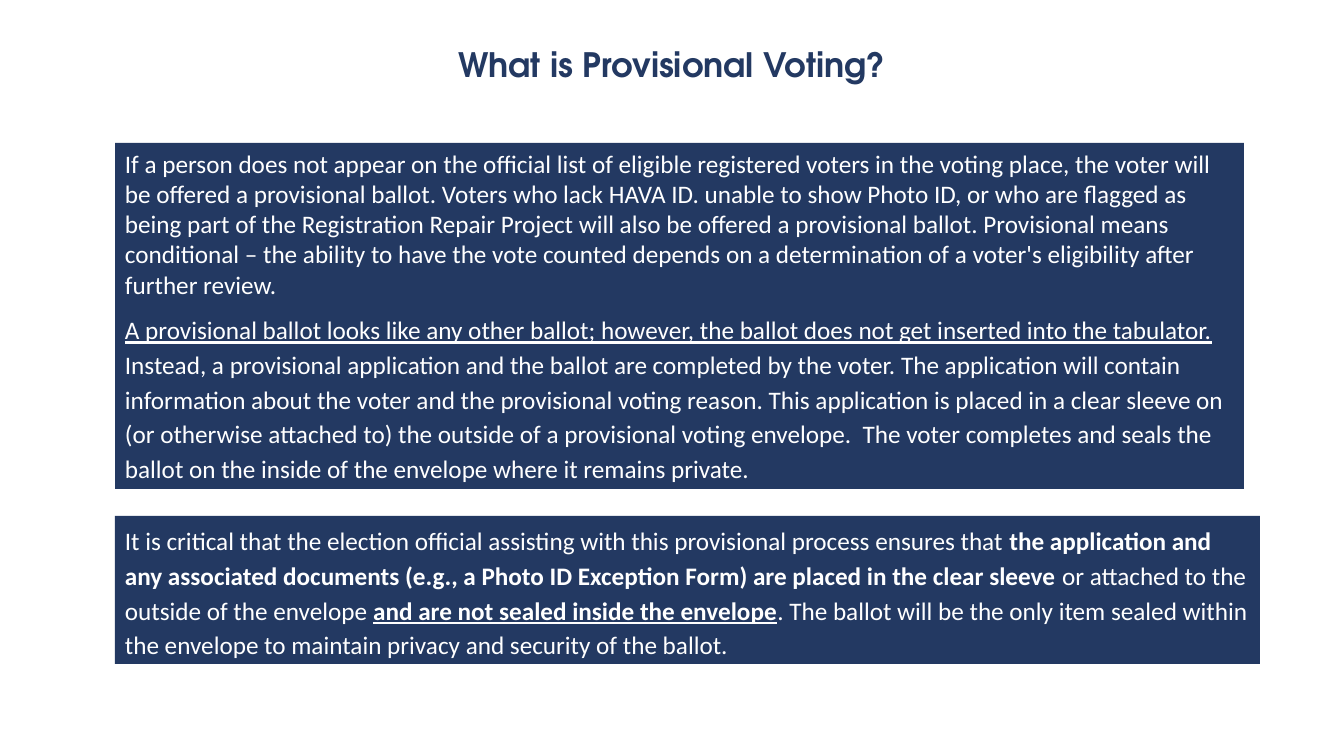
from pptx import Presentation
from pptx.dml.color import RGBColor
from pptx.enum.text import MSO_ANCHOR, MSO_AUTO_SIZE, PP_ALIGN
from pptx.util import Emu, Pt

NAVY = RGBColor(0x23, 0x39, 0x62)
WHITE = RGBColor(0xFF, 0xFF, 0xFF)
TITLE_FONT, BODY_FONT = "TeX Gyre Adventor", "Calibri"
EMU_PER_PX = 914400 / 100.8
SLIDE_SIZE = (1344, 756)

TITLE = "What is Provisional Voting?"
TITLE_BOX = (438, 40, 468, 43)
TITLE_INSET = 4

# Each panel: top, width, height, spaced out, runs of (text, bold, underline)
PANEL_LEFT = 115
PANELS = [
    (143, 1129, 163, False, [
        ("If a person does not appear on the official list of eligible registered voters "
         "in the voting place, the voter will be offered a provisional ballot. Voters who "
         "lack HAVA ID. unable to show Photo ID, or who are flagged as being part of the "
         "Registration Repair Project will also be offered a provisional ballot. "
         "Provisional means conditional – the ability to have the vote counted depends on "
         "a determination of a voter's eligibility after further review.", False, False),
    ]),
    (305, 1129, 184, True, [
        ("A provisional ballot looks like any other ballot; however, the ballot does not "
         "get inserted into the tabulator. ", False, True),
        ("Instead, a provisional application and the ballot are completed by the voter. "
         "The application will contain information about the voter and the provisional "
         "voting reason. This application is placed in a clear sleeve on (or otherwise "
         "attached to) the outside of a provisional voting envelope.  The voter completes "
         "and seals the ballot on the inside of the envelope where it remains private.",
         False, False),
    ]),
    (516, 1145, 148, True, [
        ("It is critical that the election official assisting with this provisional "
         "process ensures that ", False, False),
        ("the application and any associated documents (e.g., a Photo ID Exception Form) "
         "are placed in the clear sleeve", True, False),
        (" or attached to the outside of the envelope ", False, False),
        ("and are not sealed inside the envelope", True, True),
        (". The ballot will be the only item sealed within the envelope to maintain "
         "privacy and security of the ballot.", False, False),
    ]),
]


def px(length):
    return Emu(round(length * EMU_PER_PX))


def add_run(paragraph, text, font_name, size, color, bold=False, underline=False):
    run = paragraph.add_run()
    run.text = text
    font = run.font
    font.name, font.size = font_name, Pt(size)
    font.bold, font.underline = bold, underline
    font.color.rgb = color


def set_title(slide):
    title = slide.shapes.title
    title.left, title.top, title.width, title.height = map(px, TITLE_BOX)
    frame = title.text_frame
    frame.margin_left = frame.margin_right = px(TITLE_INSET)
    frame.margin_top = frame.margin_bottom = px(TITLE_INSET)
    frame.vertical_anchor = MSO_ANCHOR.TOP
    frame.auto_size = MSO_AUTO_SIZE.NONE
    frame.word_wrap = True
    paragraph = frame.paragraphs[0]
    paragraph.alignment = PP_ALIGN.CENTER
    add_run(paragraph, TITLE, TITLE_FONT, 24, NAVY, bold=True)


def add_panel(slide, top, width, height, spaced, runs):
    panel = slide.shapes.add_textbox(*map(px, (PANEL_LEFT, top, width, height)))
    panel.fill.solid()
    panel.fill.fore_color.rgb = NAVY
    frame = panel.text_frame
    frame.word_wrap = True
    frame.auto_size = MSO_AUTO_SIZE.SHAPE_TO_FIT_TEXT
    paragraph = frame.paragraphs[0]
    if spaced:
        paragraph.line_spacing = 1.15
        paragraph.space_before, paragraph.space_after = Pt(5), Pt(10)
    for text, bold, underline in runs:
        add_run(paragraph, text, BODY_FONT, 18, WHITE, bold, underline)


def main():
    presentation = Presentation()
    presentation.slide_width, presentation.slide_height = map(px, SLIDE_SIZE)
    title_only = presentation.slide_layouts[5]
    slide = presentation.slides.add_slide(title_only)
    set_title(slide)
    for panel in PANELS:
        add_panel(slide, *panel)
    presentation.save("out.pptx")


if __name__ == "__main__":
    main()
